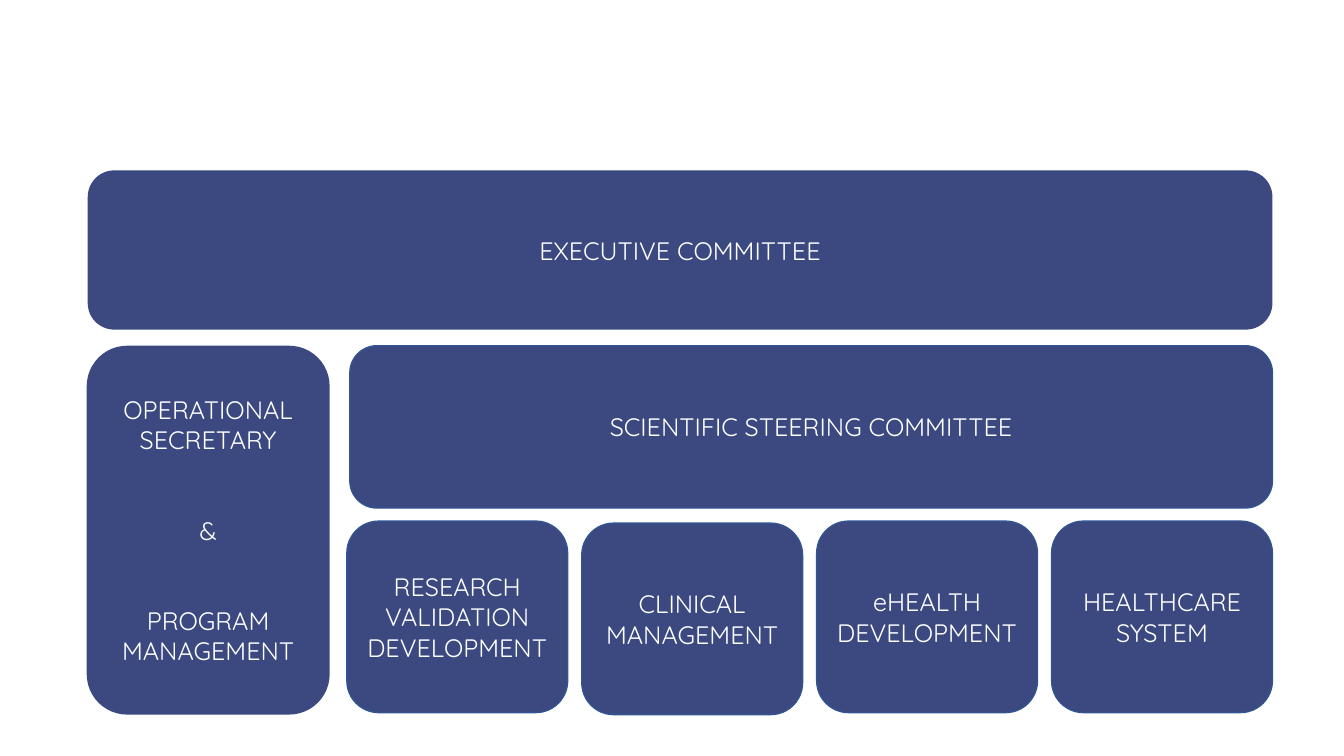
from dataclasses import dataclass

from lxml import etree
from pptx import Presentation
from pptx import util as u
from pptx.dml.color import RGBColor
from pptx.enum import shapes, text
from pptx.oxml import ns
from pptx.slide import Slide

PX = 9144


@dataclass(frozen=True)
class Theme:
    panel: str = "263673"
    panel_alpha: int = 90000
    border: str = "325491"
    label: str = "FFFFFF"
    font: str = "Quicksand"
    label_size: int = 18
    border_width: int = 1
    part_gap: int = 43


@dataclass(frozen=True)
class Body:
    left: int
    top: int
    width: int
    height: int
    labels: tuple[str, ...]
    bordered: bool = True


THEME = Theme()
TEAM_LEFT, TEAM_STEP = 344, 233
TEAMS = (
    ("RESEARCH VALIDATION DEVELOPMENT", 517),
    ("CLINICAL MANAGEMENT", 519),
    ("eHEALTH DEVELOPMENT", 517),
    ("HEALTHCARE SYSTEM", 517),
)
COMMITTEES = (
    Body(87, 169, 1175, 158, ("EXECUTIVE COMMITTEE",), False),
    Body(86, 343, 241, 366,
         ("OPERATIONAL SECRETARY", "&", "PROGRAM MANAGEMENT"), False),
    Body(347, 343, 915, 161, ("SCIENTIFIC STEERING COMMITTEE",)),
)


def draw_panel(slide: Slide, body: Body) -> None:
    panel = slide.shapes.add_shape(
        shapes.MSO_SHAPE.ROUNDED_RECTANGLE,
        *(n * PX for n in (body.left, body.top, body.width, body.height)),
    )
    panel.shadow.inherit = False
    panel.fill.solid()
    panel.fill.fore_color.rgb = RGBColor.from_string(THEME.panel)
    panel_color = panel.fill._xPr.find(ns.qn("a:solidFill"))[0]
    etree.SubElement(panel_color, ns.qn("a:alpha"), val=str(THEME.panel_alpha))
    if body.bordered:
        panel.line.color.rgb = RGBColor.from_string(THEME.border)
        panel.line.width = u.Pt(THEME.border_width)
    else:
        panel.line.fill.background()
    write_labels(panel.text_frame, body.labels)


def write_labels(frame, labels: tuple[str, ...]) -> None:
    frame.word_wrap = True
    frame.vertical_anchor = text.MSO_ANCHOR.MIDDLE
    font_format = {"name": THEME.font, "size": u.Pt(THEME.label_size)}
    for index, label in enumerate(labels):
        paragraph = frame.add_paragraph() if index else frame.paragraphs[0]
        paragraph.alignment = text.PP_ALIGN.CENTER
        if index:
            paragraph.space_before = u.Pt(THEME.part_gap)
        run = paragraph.add_run()
        run.text = label
        for attribute, value in font_format.items():
            setattr(run.font, attribute, value)
        run.font.color.rgb = RGBColor.from_string(THEME.label)


def main() -> None:
    presentation = Presentation()
    presentation.slide_width = 1333 * PX
    presentation.slide_height = 750 * PX
    slide = presentation.slides.add_slide(presentation.slide_layouts[6])
    teams = tuple(
        Body(TEAM_LEFT + column * TEAM_STEP, top, 219, 190, (name,))
        for column, (name, top) in enumerate(TEAMS)
    )
    for body in COMMITTEES + teams:
        draw_panel(slide, body)
    presentation.save("out.pptx")


if __name__ == "__main__":
    main()
